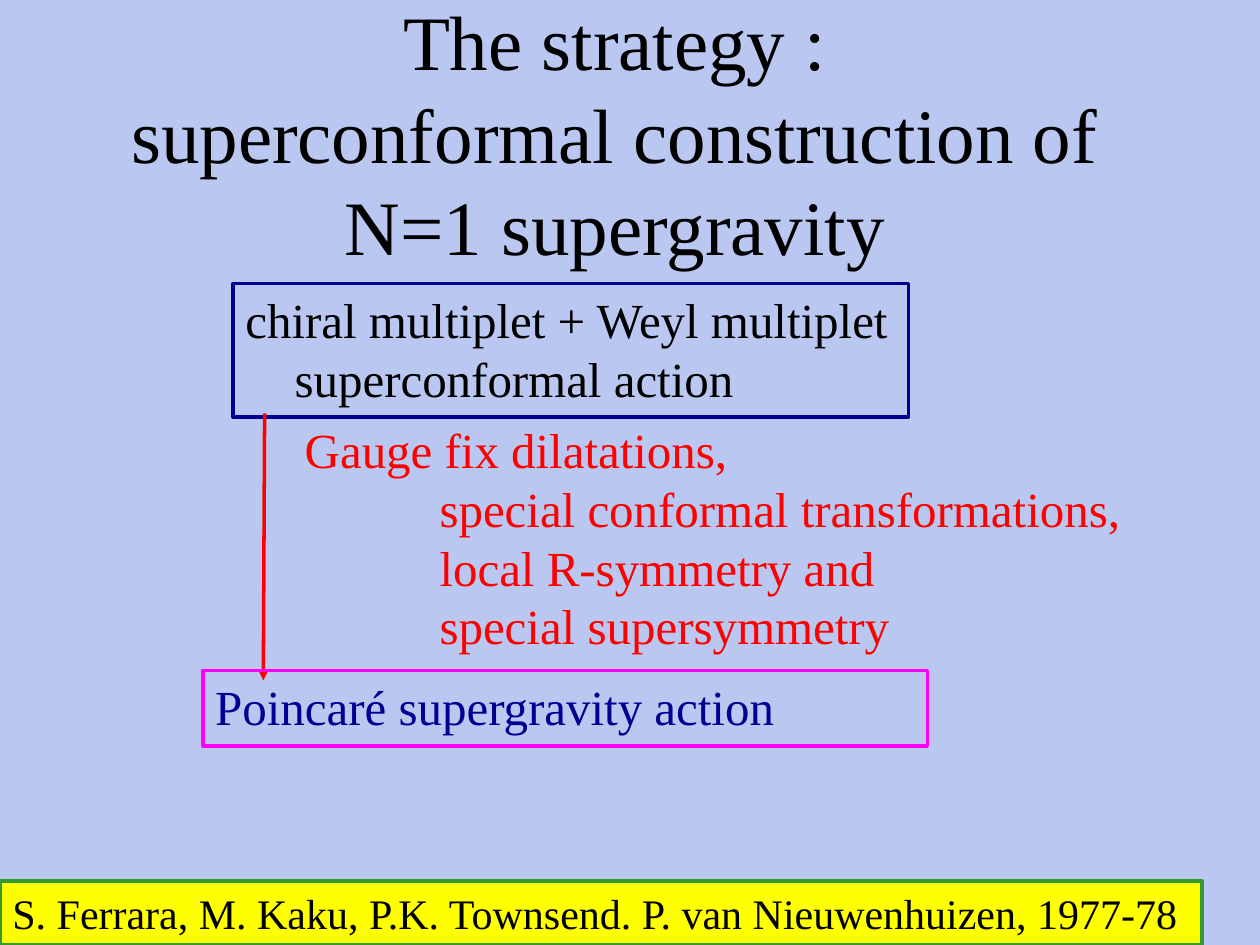
from lxml.etree import SubElement
from pptx import Presentation
from pptx.dml.color import RGBColor
from pptx.enum.shapes import MSO_CONNECTOR, MSO_SHAPE
from pptx.enum.text import MSO_ANCHOR, PP_ALIGN
from pptx.oxml.ns import qn
from pptx.util import Inches, Pt

FONT = "Times New Roman"
BLACK, NAVY, RED, MAGENTA = "000000", "000092", "FF0000", "FF00FF"
BACKGROUND, YELLOW, GREEN = "BAC8F1", "FFFF00", "339933"

TITLE = "The strategy :\vsuperconformal construction of N=1 supergravity"
TITLE_PLACE = (0.59, 0, 8.58, 2.1)

# Each line of text comes with its left indent in inches.
START = {
    "place": (1.85, 2.25, 5.36, 1.06), "outline": NAVY, "color": BLACK,
    "lines": [("chiral multiplet + Weyl multiplet", 0),
              ("superconformal action", 0.39)],
}
GAUGE_FIXING = {
    "place": (2.32, 3.28, 7.48, 1.99), "color": RED,
    "lines": [("Gauge fix dilatations,", 0),
              ("special conformal transformations,", 1.07),
              ("local R-symmetry and", 1.07),
              ("special supersymmetry", 1.07)],
}
RESULT = {
    "place": (1.61, 5.32, 5.75, 0.6), "outline": MAGENTA, "color": NAVY,
    "lines": [("Poincaré supergravity action", 0)],
}
AUTHORS = {
    "place": (0, 6.99, 9.54, 0.51), "outline": GREEN, "fill": YELLOW,
    "color": BLACK, "size": 24, "anchor": MSO_ANCHOR.MIDDLE,
    "lines": [("S. Ferrara, M. Kaku, P.K. Townsend. P. van Nieuwenhuizen, 1977-78", 0)],
}
ARROW = (2.1, 3.28, 2.09, 5.4)


def rgb(color):
    return RGBColor.from_string(color)


def inches(values):
    return [Inches(value) for value in values]


def style_font(paragraph, size, color):
    for name, value in {"name": FONT, "size": Pt(size), "bold": False}.items():
        setattr(paragraph.font, name, value)
    paragraph.font.color.rgb = rgb(color)


def style_line(line, color):
    line.color.rgb = rgb(color)
    line.width = Pt(2)


def add_title(slide):
    title = slide.shapes.title
    for name, value in zip(("left", "top", "width", "height"), inches(TITLE_PLACE)):
        setattr(title, name, value)
    frame = title.text_frame
    frame.word_wrap = True
    frame.vertical_anchor = MSO_ANCHOR.MIDDLE
    paragraph = frame.paragraphs[0]
    paragraph.text = TITLE
    paragraph.alignment = PP_ALIGN.CENTER
    style_font(paragraph, 44, BLACK)


def add_box(slide, box):
    """Add a framed rectangle, or a plain text box when there is no outline."""
    place = inches(box["place"])
    if "outline" in box:
        shape = slide.shapes.add_shape(MSO_SHAPE.RECTANGLE, *place)
        shape.shadow.inherit = False
        style_line(shape.line, box["outline"])
        if "fill" in box:
            shape.fill.solid()
            shape.fill.fore_color.rgb = rgb(box["fill"])
        else:
            shape.fill.background()
    else:
        shape = slide.shapes.add_textbox(*place)
    frame = shape.text_frame
    frame.word_wrap = True
    frame.vertical_anchor = box.get("anchor", MSO_ANCHOR.TOP)
    for number, (line, indent) in enumerate(box["lines"]):
        paragraph = frame.add_paragraph() if number else frame.paragraphs[0]
        paragraph.text = line
        paragraph.alignment = PP_ALIGN.LEFT
        if indent:
            paragraph._p.get_or_add_pPr().set("marL", str(Inches(indent)))
        style_font(paragraph, box.get("size", 28), box["color"])


def add_arrow(slide):
    arrow = slide.shapes.add_connector(MSO_CONNECTOR.STRAIGHT, *inches(ARROW))
    style_line(arrow.line, RED)
    SubElement(arrow.line._get_or_add_ln(), qn("a:tailEnd"), type="triangle")
    SubElement(arrow._element.spPr, qn("a:effectLst"))


def main():
    deck = Presentation()
    deck.slide_width, deck.slide_height = inches((10, 7.5))
    slide = deck.slides.add_slide(deck.slide_layouts[5])
    slide.background.fill.solid()
    slide.background.fill.fore_color.rgb = rgb(BACKGROUND)
    add_title(slide)
    add_box(slide, START)
    add_arrow(slide)
    for box in (GAUGE_FIXING, RESULT, AUTHORS):
        add_box(slide, box)
    deck.save("out.pptx")


if __name__ == "__main__":
    main()
